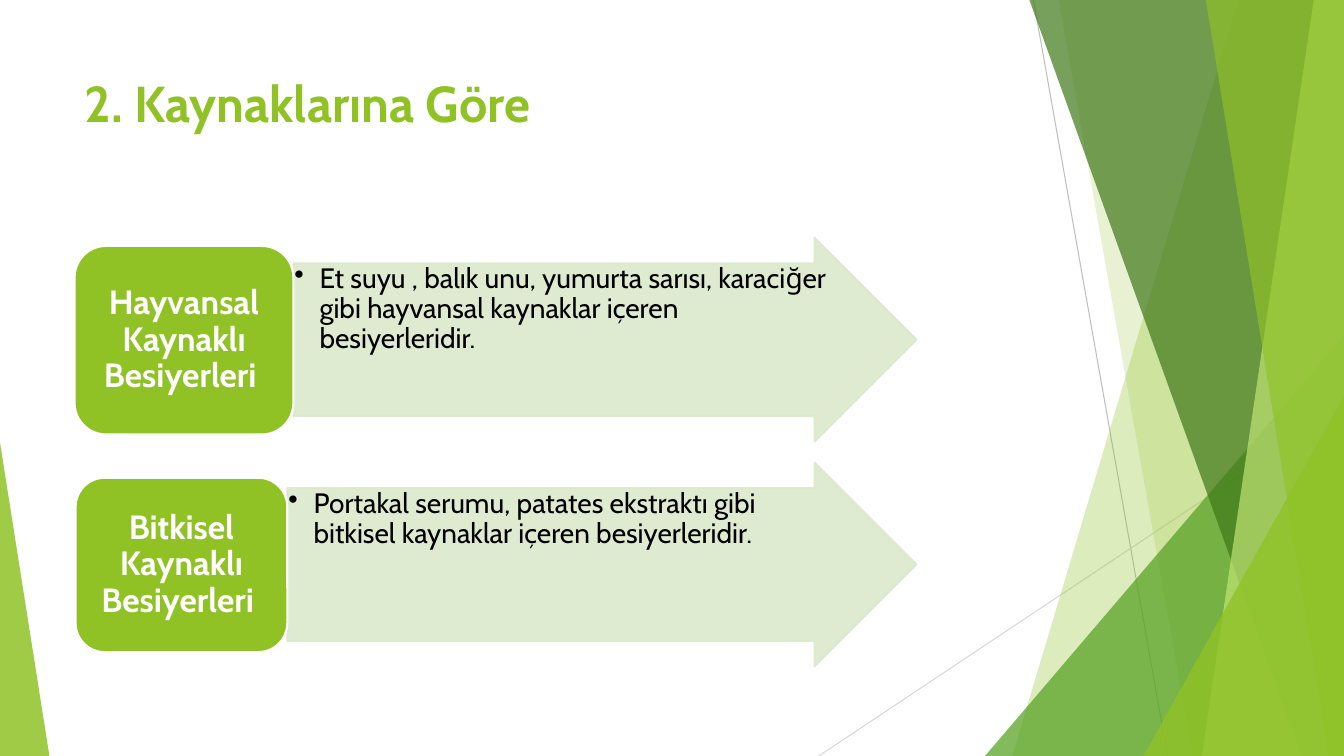
from lxml import etree
from pptx import Presentation
from pptx.dml.color import RGBColor
from pptx.enum.shapes import MSO_CONNECTOR, MSO_SHAPE
from pptx.enum.text import MSO_ANCHOR, PP_ALIGN
from pptx.oxml.ns import qn
from pptx.util import Inches, Pt

STRAIGHT = MSO_CONNECTOR.STRAIGHT
TRIANGLE = MSO_SHAPE.ISOSCELES_TRIANGLE
ARROW = MSO_SHAPE.RIGHT_ARROW
ROUNDED = MSO_SHAPE.ROUNDED_RECTANGLE
TOP, MIDDLE = MSO_ANCHOR.TOP, MSO_ANCHOR.MIDDLE
LEFT, CENTER = PP_ALIGN.LEFT, PP_ALIGN.CENTER

FONT = "Cabin"
WIDTH, HEIGHT = 13.33, 7.5
COLORS = {
    "lime": "90C226", "green": "54A021", "forest": "3F7819",
    "light": "C0E474", "pale": "DBE9CD", "white": "FFFFFF",
    "black": "000000", "gray": "BFBFBF", "silver": "D9D9D9",
}


def paint(shape, color, opacity=100, outline=None):
    shape.shadow.inherit = False
    shape.fill.solid()
    shape.fill.fore_color.rgb = RGBColor.from_string(COLORS[color])
    if outline:
        shape.line.color.rgb = RGBColor.from_string(COLORS[outline])
        shape.line.width = Pt(1.5)
    else:
        shape.line.fill.background()
    if opacity < 100:
        for tone in shape._element.spPr.iter(qn("a:srgbClr")):
            etree.SubElement(tone, qn("a:alpha"), val=str(opacity * 1000))


def write(shape, text, size, color, bold, align, anchor):
    frame = shape.text_frame
    frame.word_wrap = True
    frame.vertical_anchor = anchor
    paragraph = frame.paragraphs[0]
    paragraph.text = text
    paragraph.alignment = align
    paragraph.font.name = FONT
    paragraph.font.size = Pt(size)
    paragraph.font.bold = bold
    paragraph.font.color.rgb = RGBColor.from_string(COLORS[color])
    return paragraph


prs = Presentation()
prs.slide_width, prs.slide_height = Inches(WIDTH), Inches(HEIGHT)
slide = prs.slides.add_slide(prs.slide_layouts[5])
shapes = slide.shapes

rays = [
    (10.25, 0, 11.58, HEIGHT, "gray"),
    (WIDTH, 4.03, 8.12, HEIGHT, "silver"),
]
for x1, y1, x2, y2, color in rays:
    ray = shapes.add_connector(STRAIGHT, Inches(x1), Inches(y1), Inches(x2), Inches(y2))
    ray.line.color.rgb = RGBColor.from_string(COLORS[color])
    ray.line.width = Pt(0.75)
    etree.SubElement(ray._element.spPr, qn("a:effectLst"))

facets = [
    ("band", 12.28, 10.04, "lime", 30),
    ("band", 10.5, 11.83, "lime", 20),
    ("corner", 9.77, 3.56, 4.17, 1, "green", 72),
    ("band", 10.21, 12.91, "forest", 70),
    ("band", 13.03, 11.92, "light", 70),
    ("band", 11.96, 13.18, "lime", 65),
    ("corner", 11.34, 1.99, 3.57, 1, "lime", 80),
    ("corner", 0, 0.49, 3.11, 0, "lime", 85),
]
for kind, *geometry, color, opacity in facets:
    if kind == "band":
        top_x, bottom_x = geometry
        outline = shapes.build_freeform(Inches(top_x), 0)
        outline.add_line_segments([
            (Inches(WIDTH), 0),
            (Inches(WIDTH), Inches(HEIGHT)),
            (Inches(bottom_x), Inches(HEIGHT)),
        ])
        facet = outline.convert_to_shape()
    else:
        left, width, height, apex = geometry
        facet = shapes.add_shape(TRIANGLE, Inches(left), Inches(HEIGHT - height),
                                 Inches(width), Inches(height))
        facet.adjustments[0] = apex
    paint(facet, color, opacity)

title = shapes.title
title.left, title.top = Inches(0.74), Inches(0.67)
title.width, title.height = Inches(9.4), Inches(1.44)
write(title, "2. Kaynaklarına Göre", 36, "lime", True, LEFT, TOP)

ARROW_RIGHT, ARROW_HEIGHT = 9.09, 2.02
sources = [
    ("Hayvansal Kaynaklı Besiyerleri ",
     "Et suyu , balık unu, yumurta sarısı, karaciğer gibi hayvansal kaynaklar içeren besiyerleridir.",
     2.36, (0.74, 2.44, 2.17, 1.87)),
    ("Bitkisel Kaynaklı Besiyerleri ",
     "Portakal serumu, patates ekstraktı gibi bitkisel kaynaklar içeren besiyerleridir.",
     4.59, (0.75, 4.74, 2.1, 1.73)),
]
for name, description, arrow_top, label_box in sources:
    arrow_left = label_box[0] + label_box[2]
    arrow = shapes.add_shape(ARROW, Inches(arrow_left), Inches(arrow_top),
                             Inches(ARROW_RIGHT - arrow_left), Inches(ARROW_HEIGHT))
    arrow.adjustments[0] = 0.75
    arrow.adjustments[1] = 0.5
    paint(arrow, "pale", 90, "pale")
    frame = arrow.text_frame
    frame.margin_left = frame.margin_right = Inches(0.01)
    frame.margin_top = frame.margin_bottom = Inches(0.01)
    detail = write(arrow, description, 20, "black", False, LEFT, TOP)
    detail.line_spacing = 0.9
    properties = detail._p.get_or_add_pPr()
    properties.set("marL", str(Inches(0.25)))
    properties.set("indent", str(-Inches(0.25)))
    etree.SubElement(properties, qn("a:buChar"), char="•")
    properties.append(properties.find(qn("a:defRPr")))

    label = shapes.add_shape(ROUNDED, *map(Inches, label_box))
    paint(label, "lime", outline="white")
    write(label, name, 24, "white", True, CENTER, MIDDLE).line_spacing = 0.9

prs.save("out.pptx")
